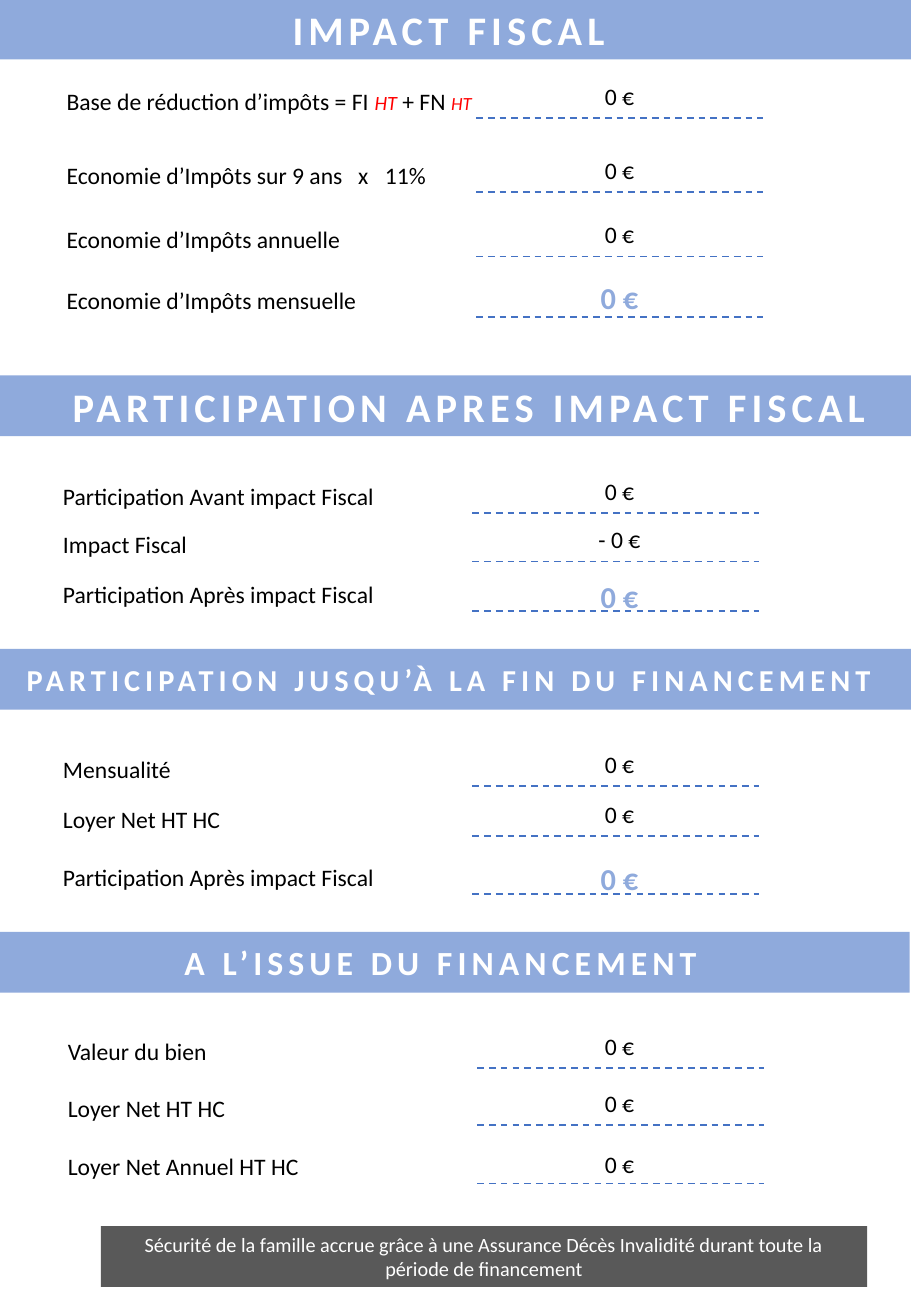
import pptx
import pptx.util
import pptx.dml.color
import pptx.enum.dml
import pptx.enum.shapes
import pptx.enum.text
import pptx.oxml.ns
import lxml.etree

theme = {
    "font": "Calibri", "band": "8FAADC", "rule": "4472C4", "note": "595959",
    "ink": "000000", "white": "FFFFFF", "red": "FF0000",
    "body": 14, "total": 18, "small": 12, "tiny": 11,
}
Align = pptx.enum.text.PP_ALIGN
Shape = pptx.enum.shapes.MSO_SHAPE
qn = pptx.oxml.ns.qn
cols, rows = 750, 1083

deck = pptx.Presentation()
deck.slide_width = pptx.util.Inches(7.5)
deck.slide_height = pptx.util.Inches(10.83)
cell = deck.slide_width // cols
slide = deck.slides.add_slide(deck.slide_layouts[6])


def paint(box, color):
    box.shadow.inherit = False
    box.fill.solid()
    box.fill.fore_color.rgb = pptx.dml.color.RGBColor.from_string(color)
    box.line.fill.background()


def write(text, at=None, box=None, size=theme["body"], color=theme["ink"],
          bold=False, space=0, align=Align.LEFT, tabs=()):
    box = box or slide.shapes.add_textbox(*[n * cell for n in at])
    frame = box.text_frame
    frame.word_wrap = True
    frame.vertical_anchor = pptx.enum.text.MSO_ANCHOR.MIDDLE
    line = frame.paragraphs[0]
    line.alignment = align
    if tabs:
        stops = lxml.etree.SubElement(line._p.get_or_add_pPr(), qn("a:tabLst"))
        for stop in tabs:
            lxml.etree.SubElement(stops, qn("a:tab"), pos=str(stop * cell), algn="l")
    parts = [(text, size, color, False)] if isinstance(text, str) else text
    for words, points, hue, slant in parts:
        run = line.add_run()
        run.text = words
        run.font.name = theme["font"]
        run.font.size = pptx.util.Pt(points)
        run.font.bold = bold
        run.font.italic = slant
        run.font.color.rgb = pptx.dml.color.RGBColor.from_string(hue)
        if space:
            run._r.get_or_add_rPr().set("spc", str(space * 100))


base = [
    ("Base de réduction d’impôts = FI ", theme["body"], theme["ink"], False),
    ("HT", theme["small"], theme["red"], True),
    (" + FN ", theme["body"], theme["ink"], False),
    ("HT", theme["tiny"], theme["red"], True),
]
after = "Participation Après impact Fiscal"
rent = "Loyer Net HT HC"
zero = "0 €"

parts = [
    ("IMPACT FISCAL", 24, 231, -1, 0, 45, [
        (base, zero, 97, 35, False),
        ("Economie d’Impôts sur 9 ans\tx\t11%", zero, 158, 35, False),
        ("Economie d’Impôts annuelle", zero, 211, 35, False),
        ("Economie d’Impôts mensuelle", zero, 261, 36, True)]),
    ("PARTICIPATION APRES IMPACT FISCAL", 24, 50, 309, 0, 42, [
        ("Participation Avant impact Fiscal", zero, 422, 35, False),
        ("Impact Fiscal", "- 0 €", 462, 35, False),
        (after, zero, 503, 32, True)]),
    ("PARTICIPATION JUSQU’À LA FIN DU FINANCEMENT", 18, 12, 534, 0, 42, [
        ("Mensualité", zero, 647, 35, False),
        (rent, zero, 688, 35, False),
        (after, zero, 736, 33, True)]),
    ("A L’ISSUE DU FINANCEMENT", 20, 142, 767, -1, 46, [
        ("Valeur du bien", zero, 879, 35, False),
        (rent, zero, 926, 35, False),
        ("Loyer Net Annuel HT HC", zero, 974, 33, False)]),
]

for title, size, start, top, edge, left, items in parts:
    band = slide.shapes.add_shape(
        Shape.RECTANGLE, edge * cell, top * cell, cols * cell, 50 * cell)
    paint(band, theme["band"])
    write(title, at=(start, top, cols - start, 50), size=size,
          color=theme["white"], bold=True, space=3)
    for label, value, base_row, lift, total in items:
        write(label, at=(left, base_row - 31, 370, 34),
              tabs=(240, 262) if "\t" in label else ())
        write(value, at=(460, base_row - lift, 100, 40 if total else 34),
              size=theme["total" if total else "body"],
              color=theme["band" if total else "ink"],
              bold=total, align=Align.CENTER)
        rule = slide.shapes.add_connector(
            pptx.enum.shapes.MSO_CONNECTOR.STRAIGHT,
            (left + 347) * cell, base_row * cell, (left + 583) * cell, base_row * cell)
        rule.line.color.rgb = pptx.dml.color.RGBColor.from_string(theme["rule"])
        rule.line.width = pptx.util.Pt(1)
        rule.line.dash_style = pptx.enum.dml.MSO_LINE.DASH
        lxml.etree.SubElement(rule._element.spPr, qn("a:effectLst"))

note = slide.shapes.add_shape(
    Shape.RECTANGLE, 83 * cell, (rows - 74) * cell, 631 * cell, 50 * cell)
paint(note, theme["note"])
write("Sécurité de la famille accrue grâce à une Assurance Décès Invalidité "
      "durant toute la période de financement",
      box=note, size=theme["small"], color=theme["white"], align=Align.CENTER)

deck.save("out.pptx")
